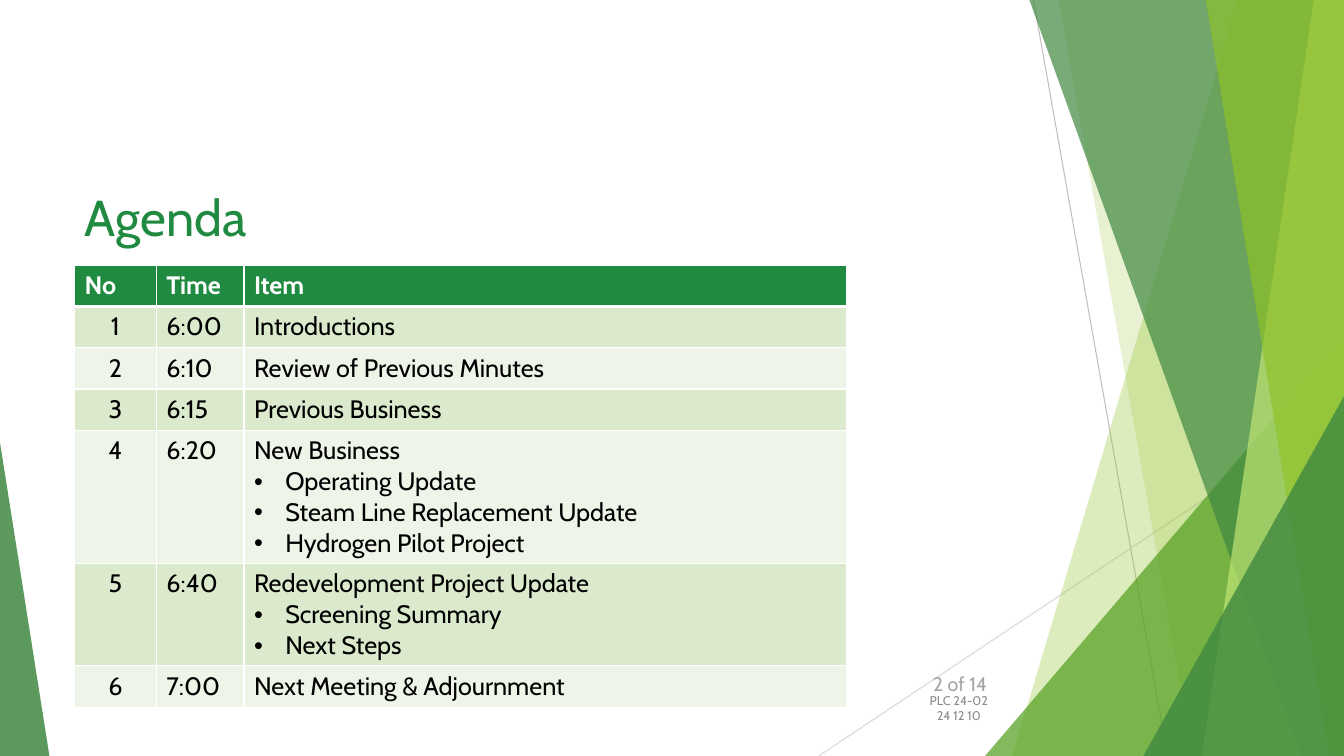
from lxml import etree
from pptx import Presentation
from pptx.dml.color import RGBColor
from pptx.enum.shapes import MSO_CONNECTOR, MSO_SHAPE
from pptx.enum.text import MSO_ANCHOR, MSO_AUTO_SIZE, PP_ALIGN
from pptx.oxml.ns import qn
from pptx.util import Inches, Pt

STRAIGHT = MSO_CONNECTOR.STRAIGHT
TRIANGLE = MSO_SHAPE.ISOSCELES_TRIANGLE
TOP, MIDDLE = MSO_ANCHOR.TOP, MSO_ANCHOR.MIDDLE
NO_AUTOFIT = MSO_AUTO_SIZE.NONE
LEFT, CENTER, RIGHT = PP_ALIGN.LEFT, PP_ALIGN.CENTER, PP_ALIGN.RIGHT

FONT = "Cabin"
WHITE = RGBColor(0xFF, 0xFF, 0xFF)
BLACK = RGBColor(0x00, 0x00, 0x00)
GREEN = RGBColor(0x1F, 0x8A, 0x40)
FOREST = RGBColor(0x3F, 0x88, 0x40)
LEAF = RGBColor(0x54, 0xA0, 0x21)
LIME = RGBColor(0x90, 0xC2, 0x26)
PALE_LIME = RGBColor(0xC0, 0xE4, 0x74)
ROW_DARK = RGBColor(0xDB, 0xE9, 0xCD)
ROW_LIGHT = RGBColor(0xEE, 0xF4, 0xE8)
GRAY_LINE = RGBColor(0xBF, 0xBF, 0xBF)
LIGHT_LINE = RGBColor(0xD9, 0xD9, 0xD9)
PAGE_GRAY = RGBColor(0xA6, 0xA6, 0xA6)
CODE_GRAY = RGBColor(0x8C, 0x8C, 0x8C)

WIDTH, HEIGHT = 13.33, 7.5
COLUMN_WIDTHS = (0.81, 0.87, 5.98)
ROW_HEIGHT, EXTRA_LINE = 0.41, 0.3
BULLET_INDENT = Inches(0.31)

HEADINGS = ("No", "Time", "Item")
AGENDA = (
    ("6:00", "Introductions", ()),
    ("6:10", "Review of Previous Minutes", ()),
    ("6:15", "Previous Business", ()),
    ("6:20", "New Business",
     ("Operating Update", "Steam Line Replacement Update", "Hydrogen Pilot Project")),
    ("6:40", "Redevelopment Project Update", ("Screening Summary", "Next Steps")),
    ("7:00", "Next Meeting & Adjournment", ()),
)


def write(frame, text, *, size=18, color=BLACK, bold=False, align=LEFT,
          bullet=False, first=True):
    para = frame.paragraphs[0] if first else frame.add_paragraph()
    if bullet:
        properties = para._p.get_or_add_pPr()
        properties.set("marL", str(BULLET_INDENT))
        properties.set("indent", str(-BULLET_INDENT))
        etree.SubElement(properties, qn("a:buFont"), typeface="Arial")
        etree.SubElement(properties, qn("a:buChar"), char="•")
    para.alignment = align
    span = para.add_run()
    span.text = text
    span.font.name = FONT
    span.font.size = Pt(size)
    span.font.bold = bold
    span.font.color.rgb = color


def paint(shape, color, opacity):
    shape.shadow.inherit = False
    shape.line.fill.background()
    shape.fill.solid()
    shape.fill.fore_color.rgb = color
    tint = shape._element.spPr.find(qn("a:solidFill")).find(qn("a:srgbClr"))
    etree.SubElement(tint, qn("a:alpha"), val=str(opacity * 1000))


def add_line(page, start, end, color):
    line = page.shapes.add_connector(
        STRAIGHT, *(Inches(value) for value in (*start, *end)))
    line.line.color.rgb = color
    line.line.width = Pt(0.75)
    etree.SubElement(line._element.spPr, qn("a:effectLst"))


def add_band(page, top_left, bottom_left, color, opacity):
    """A full-height band that reaches the right edge of the page."""
    builder = page.shapes.build_freeform(Inches(top_left), 0)
    corners = ((WIDTH, 0), (WIDTH, HEIGHT), (bottom_left, HEIGHT))
    builder.add_line_segments([(Inches(x), Inches(y)) for x, y in corners])
    paint(builder.convert_to_shape(), color, opacity)


def add_triangle(page, left, top, width, apex, color, opacity):
    """A triangle that stands on the bottom edge of the page."""
    shape = page.shapes.add_shape(
        TRIANGLE, Inches(left), Inches(top), Inches(width), Inches(HEIGHT - top))
    shape.adjustments[0] = apex
    paint(shape, color, opacity)


def add_box(page, left, top, width, height, anchor):
    box = page.shapes.add_textbox(
        Inches(left), Inches(top), Inches(width), Inches(height))
    box.text_frame.word_wrap = True
    box.text_frame.vertical_anchor = anchor
    return box.text_frame


def format_cell(cell, fill, bottom_width):
    properties = cell._tc.get_or_add_tcPr()
    for side, width in (("L", 1), ("R", 1), ("T", 1), ("B", bottom_width)):
        border = etree.SubElement(properties, qn(f"a:ln{side}"), w=str(Pt(width)))
        solid = etree.SubElement(border, qn("a:solidFill"))
        etree.SubElement(solid, qn("a:srgbClr"), val=str(WHITE))
    cell.fill.solid()
    cell.fill.fore_color.rgb = fill


def add_agenda(page):
    heights = [ROW_HEIGHT]
    heights += [ROW_HEIGHT + EXTRA_LINE * len(points) for _, _, points in AGENDA]
    table = page.shapes.add_table(
        len(heights), len(HEADINGS), Inches(0.74), Inches(2.63),
        Inches(sum(COLUMN_WIDTHS)), Inches(sum(heights))).table
    for column, width in zip(table.columns, COLUMN_WIDTHS):
        column.width = Inches(width)
    for row, height in zip(table.rows, heights):
        row.height = Inches(height)

    for cell, heading in zip(table.rows[0].cells, HEADINGS):
        format_cell(cell, GREEN, 3)
        write(cell.text_frame, heading, color=WHITE, bold=True)

    for number, (time, item, points) in enumerate(AGENDA, start=1):
        cells = list(table.rows[number].cells)
        for cell in cells:
            format_cell(cell, ROW_DARK if number % 2 else ROW_LIGHT, 1)
        write(cells[0].text_frame, str(number), align=CENTER)
        write(cells[1].text_frame, time)
        write(cells[2].text_frame, item)
        for point in points:
            write(cells[2].text_frame, point, bullet=True, first=False)


def add_scenery(page):
    add_line(page, (10.25, 0), (11.58, HEIGHT), GRAY_LINE)
    add_line(page, (WIDTH, 4.03), (8.12, HEIGHT), LIGHT_LINE)
    add_band(page, 12.28, 10.04, LIME, 30)
    add_band(page, 10.5, 11.83, LIME, 20)
    add_triangle(page, 9.77, 3.33, 3.56, 1, LEAF, 72)
    add_band(page, 10.21, 12.91, FOREST, 70)
    add_band(page, 13.03, 11.92, PALE_LIME, 70)
    add_band(page, 11.96, 13.18, LIME, 65)
    add_triangle(page, 11.34, 3.93, 1.99, 1, FOREST, 80)
    add_triangle(page, 0, 4.39, 0.49, 0, FOREST, 85)


def add_title(page, text):
    title = page.shapes.title
    title.left, title.top = Inches(0.74), Inches(1.8)
    title.width, title.height = Inches(9.4), Inches(0.83)
    title.text_frame.auto_size = NO_AUTOFIT
    title.text_frame.vertical_anchor = TOP
    write(title.text_frame, text, size=36, color=GREEN)


def main():
    deck = Presentation()
    deck.slide_width, deck.slide_height = Inches(WIDTH), Inches(HEIGHT)
    page = deck.slides.add_slide(deck.slide_layouts[5])

    # Background shapes
    add_scenery(page)

    # Title and agenda
    add_title(page, "Agenda")
    add_agenda(page)

    # Page number and meeting code
    write(add_box(page, 9.01, 6.62, 0.88, 0.4, TOP), "2 of 14",
          size=14, color=PAGE_GRAY, align=RIGHT)
    code = add_box(page, 9.01, 6.82, 1, 0.4, MIDDLE)
    write(code, "PLC 24-02", size=9, color=CODE_GRAY, align=CENTER)
    write(code, "24 12 10", size=9, color=CODE_GRAY, align=CENTER, first=False)

    deck.save("out.pptx")


if __name__ == "__main__":
    main()
